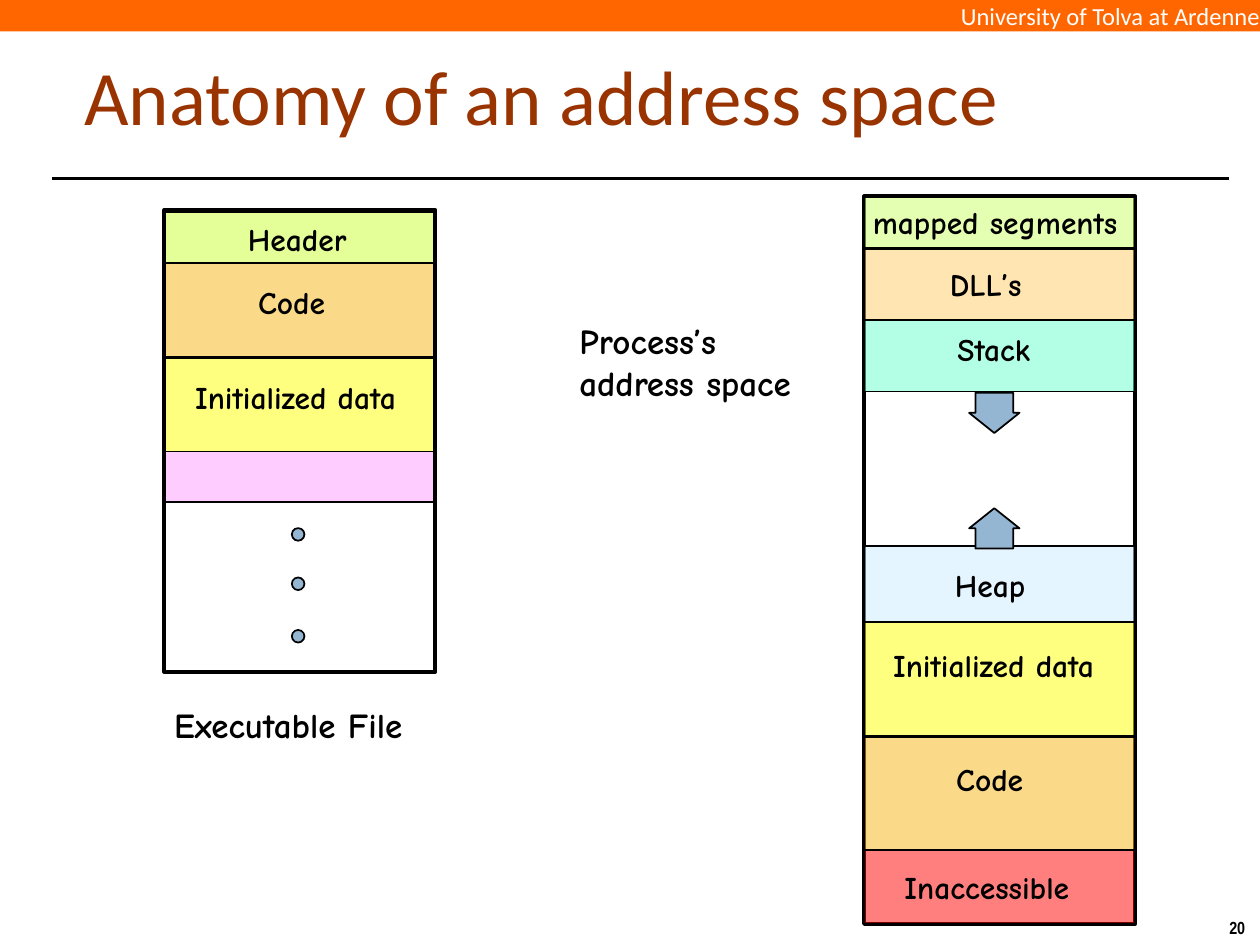
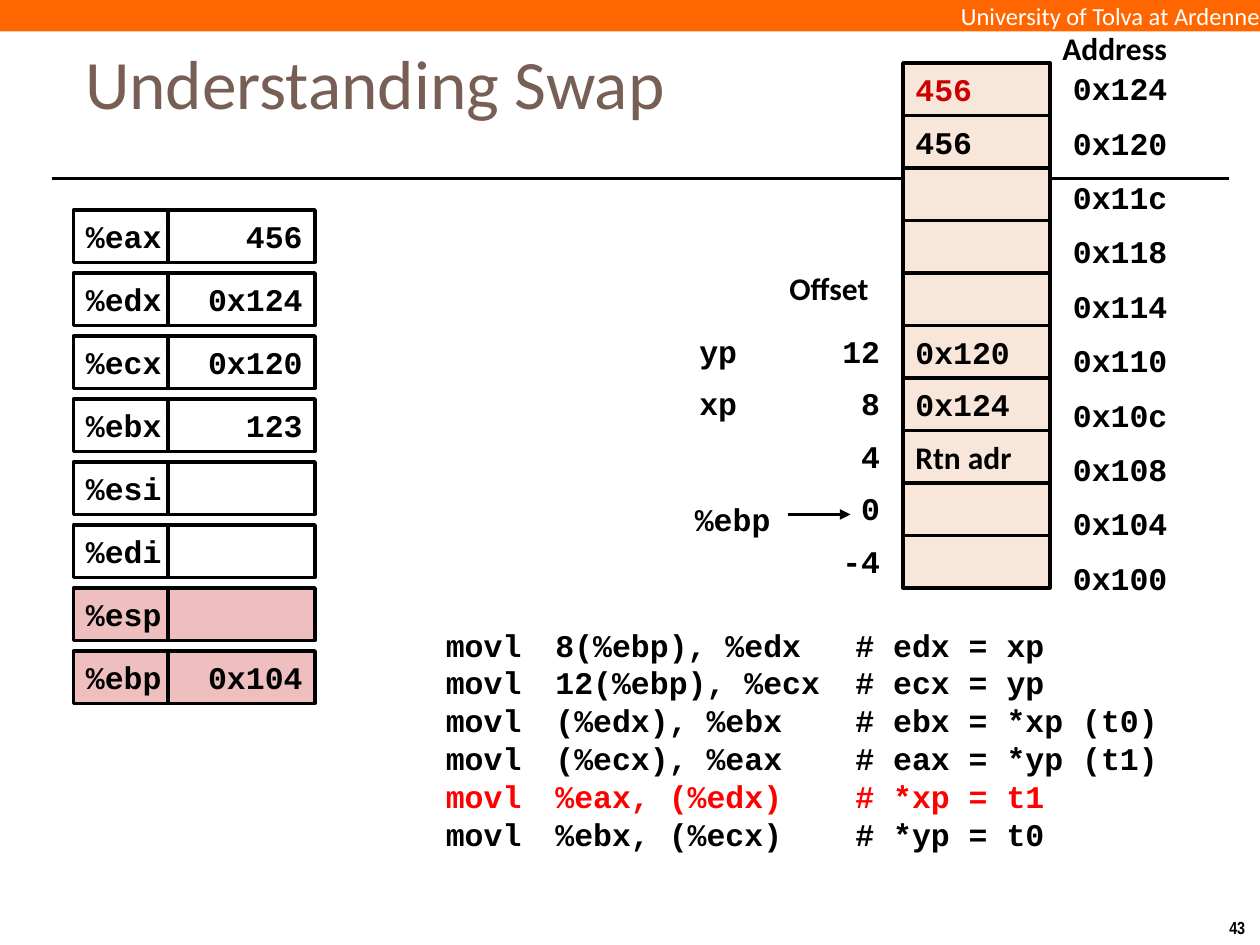
import pptx
import pptx.util
import pptx.dml.color
import pptx.enum.shapes
import pptx.enum.text
import pptx.oxml
import pptx.oxml.ns
from lxml import etree

SHAPES = pptx.enum.shapes.MSO_SHAPE
ALIGN = pptx.enum.text.PP_ALIGN
ANCHOR = pptx.enum.text.MSO_ANCHOR
AUTO_SIZE = pptx.enum.text.MSO_AUTO_SIZE
qn = pptx.oxml.ns.qn

COLUMNS, ROWS = 120, 90
WIDTH, HEIGHT = pptx.util.Inches(10), pptx.util.Inches(7.5)

COLORS = {
    "black": "000000",
    "white": "FFFFFF",
    "band": "FF6600",
    "anatomy title": "993300",
    "swap title": "775F55",
    "header": "CCFF33",
    "mapped": "CCFF66",
    "code": "F7B615",
    "data": "FFFF00",
    "section": "FFCCFF",
    "library": "FFCC66",
    "stack": "66FFCC",
    "heap": "CCECFF",
    "inaccessible": "FF0000",
    "marker": "94B6D2",
    "memory": "F8E6DA",
    "pointer register": "EFBFBF",
    "changed": "CC0000",
    "current": "FF0000",
}
SANS, COMIC, MONO, NARROW = "Calibri", "Comic Neue", "Courier New", "Arial Narrow"

FILE_LEFT, SPACE_LEFT, SEGMENT_WIDTH = 15.65, 82.3, 25.8
FILE_SEGMENTS = [
    ("Code", 25.1, 8.9, "code", (23.4, 26.4, 9.24)),
    ("Header", 20.2, 4.8, "header", (22.44, 20.4, 12.72)),
    ("Initialized data", 34.1, 8.9, "data", (17.4, 35.4, 24.12)),
]
SPACE_SEGMENTS = [
    ("Code", 70.2, 10.7, "code", (89.88, 71.76, 9.24)),
    ("Initialized data", 59.3, 10.8, "data", (83.88, 60.96, 24.12)),
    ("Heap", 52, 7.2, "heap", (89.76, 53.28, 9.48)),
    ("Stack", 30.5, 6.8, "stack", (90, 30.84, 10.68)),
    ("DLL’s", 23.7, 6.8, "library", (89.28, 24.6, 9.84)),
    ("mapped segments", 18.8, 4.8, "mapped", (81.96, 18.72, 26.88)),
    ("Inaccessible", 81, 7, "inaccessible", (84.96, 82.08, 20.28)),
]

CELL_WIDTH, CELL_HEIGHT = 14, 5
MEMORY_LEFT, MEMORY_TOP = 86, 6
MEMORY = ["456", "456", "", "", "", "0x120", "0x124", "Rtn adr", "", ""]
OFFSETS = ["12", "8", "4", "0", "-4"]
ARGUMENTS = ["yp", "xp"]
FIRST_OFFSET_ROW = 5
ADDRESSES = ["0x124", "0x120", "0x11c", "0x118", "0x114",
             "0x110", "0x10c", "0x108", "0x104", "0x100"]
ADDRESS_PITCH = 5.18
REGISTERS = {"%eax": "456", "%edx": "0x124", "%ecx": "0x120", "%ebx": "123",
             "%esi": "", "%edi": "", "%esp": "", "%ebp": "0x104"}
POINTER_REGISTERS = ("%esp", "%ebp")
REGISTER_PITCH = 6
INSTRUCTIONS = [
    ("8(%ebp), %edx", "# edx = xp"),
    ("12(%ebp), %ecx", "# ecx = yp"),
    ("(%edx), %ebx", "# ebx = *xp (t0)"),
    ("(%ecx), %eax", "# eax = *yp (t1)"),
    ("%eax, (%edx)", "# *xp = t1"),
    ("%ebx, (%ecx)", "# *yp = t0"),
]
CURRENT_INSTRUCTION = 4
CODE_TABS = (0.44, 1.31, 3.69)


def across(columns):
    return round(WIDTH * columns / COLUMNS)


def down(rows):
    return round(HEIGHT * rows / ROWS)


def place(left, top, width, height):
    return across(left), down(top), across(width), down(height)


def color(name):
    return pptx.dml.color.RGBColor.from_string(COLORS[name])


def style(paragraph, size, font, ink="black", bold=True, align=ALIGN.LEFT):
    paragraph.alignment = align
    paragraph.font.size = pptx.util.Pt(size)
    paragraph.font.name = font
    paragraph.font.bold = bold
    paragraph.font.color.rgb = color(ink)


def add_label(slide, text, box, size=18, font=COMIC, wrap=False, **look):
    label = slide.shapes.add_textbox(*place(*box))
    frame = label.text_frame
    frame.word_wrap = wrap
    frame.auto_size = AUTO_SIZE.SHAPE_TO_FIT_TEXT
    frame.text = text
    for paragraph in frame.paragraphs:
        style(paragraph, size, font, **look)
    return label


def add_block(slide, box, fill=None, line=1, alpha=None, kind=SHAPES.RECTANGLE):
    block = slide.shapes.add_shape(kind, *place(*box))
    block.shadow.inherit = False
    if fill:
        block.fill.solid()
        block.fill.fore_color.rgb = color(fill)
    else:
        block.fill.background()
    if alpha:
        tint = block.fill._xPr.find(qn("a:solidFill"))[0]
        etree.SubElement(tint, qn("a:alpha")).set("val", str(alpha * 1000))
    if line:
        block.line.color.rgb = color("black")
        block.line.width = pptx.util.Pt(line)
    else:
        block.line.fill.background()
    return block


def add_cell(slide, left, top, width, fill, text, **look):
    cell = add_block(slide, (left, top, width, CELL_HEIGHT), fill, line=2)
    if text:
        frame = cell.text_frame
        frame.word_wrap = False
        frame.vertical_anchor = ANCHOR.MIDDLE
        frame.text = text
        style(frame.paragraphs[0], 18, **look)


def add_line(slide, left, right, row, width, arrow=False):
    line = slide.shapes.add_connector(
        pptx.enum.shapes.MSO_CONNECTOR.STRAIGHT,
        across(left), down(row), across(right), down(row))
    line.line.color.rgb = color("black")
    line.line.width = pptx.util.Pt(width)
    properties = line._element.spPr
    if arrow:
        etree.SubElement(properties.find(qn("a:ln")), qn("a:tailEnd")).set("type", "triangle")
    etree.SubElement(properties, qn("a:effectLst"))


def add_slide(presentation, title, box, size, ink, number):
    slide = presentation.slides.add_slide(presentation.slide_layouts[5])
    heading = slide.shapes.title
    heading.left, heading.top, heading.width, heading.height = place(*box)
    frame = heading.text_frame
    frame.text = title
    frame.word_wrap = True
    frame.auto_size = AUTO_SIZE.NONE
    frame.vertical_anchor = ANCHOR.MIDDLE
    style(frame.paragraphs[0], size, SANS, ink, bold=False)

    band = add_block(slide, (0, 0, COLUMNS, 3), "band", line=None)
    frame = band.text_frame
    frame.margin_left = frame.margin_right = frame.margin_top = frame.margin_bottom = 0
    frame.word_wrap = False
    frame.text = "University of Tolva at Ardenne"
    style(frame.paragraphs[0], 14, SANS, "white", bold=False, align=ALIGN.RIGHT)

    add_line(slide, 5, 117, 17, 1.5)
    add_label(slide, number, (115.9, 86.7, 4.1, 3.2), 10, NARROW)
    return slide


def add_segments(slide, left, segments):
    for name, top, height, fill, (label_left, label_top, label_width) in segments:
        add_block(slide, (left, top, SEGMENT_WIDTH, height), fill, alpha=50)
        add_label(slide, name, (label_left, label_top, label_width, 5.4))


def build_anatomy(presentation):
    slide = add_slide(presentation, "Anatomy of an address space",
                      (6.84, 3.96, 96.1, 10.2), 44, "anatomy title", "20")

    add_segments(slide, FILE_LEFT, FILE_SEGMENTS)
    add_block(slide, (FILE_LEFT, 43, SEGMENT_WIDTH, 4.8), "section")
    add_block(slide, (FILE_LEFT, 20, SEGMENT_WIDTH, 44), line=2.25)
    for top in (50.3, 55, 60):
        add_block(slide, (27.8, top, 1.2, 1.2), "marker", kind=SHAPES.OVAL)
    add_label(slide, "Executable File", (15.4, 66.4, 26.4, 5.9), 20)

    add_block(slide, (SPACE_LEFT, 18.7, SEGMENT_WIDTH, 69.3), line=2.25)
    add_segments(slide, SPACE_LEFT, SPACE_SEGMENTS)
    for kind, top in ((SHAPES.DOWN_ARROW, 37.4), (SHAPES.UP_ARROW, 48.4)):
        arrow = add_block(slide, (92.3, top, 4.8, 3.84), "marker", kind=kind)
        arrow.adjustments[0] = 0.75
    add_label(slide, "Process’s\naddress space", (54, 29.8, 24.4, 10.6), 20)


def add_memory(slide):
    for row, value in enumerate(MEMORY):
        add_cell(slide, MEMORY_LEFT, MEMORY_TOP + row * CELL_HEIGHT, CELL_WIDTH, "memory", value,
                 font=SANS if value == "Rtn adr" else MONO,
                 ink="changed" if row == 0 else "black")
    add_label(slide, "Address", (100, 2.2, 12.5, 4.8), font=SANS)
    for row, address in enumerate(ADDRESSES):
        add_label(slide, address, (101, MEMORY_TOP + row * ADDRESS_PITCH, 16, 4.8),
                  font=MONO, wrap=True)


def add_frame_offsets(slide):
    top = MEMORY_TOP + FIRST_OFFSET_ROW * CELL_HEIGHT
    add_label(slide, "Offset", (74, 25, 10, 4.8), font=SANS)
    for row, offset in enumerate(OFFSETS):
        add_label(slide, offset, (79, top + row * CELL_HEIGHT, 6, 4.8),
                  font=MONO, align=ALIGN.RIGHT)
    for row, argument in enumerate(ARGUMENTS):
        label = add_label(slide, argument, (66, top + row * CELL_HEIGHT, 8.6, 4.8),
                          font=MONO, wrap=True)
        label.text_frame.margin_left = label.text_frame.margin_right = pptx.util.Inches(0.05)
    add_label(slide, "%ebp", (65, 47, 9.6, 4.8), font=MONO)
    add_line(slide, 75, 81, 49, 2, arrow=True)


def add_registers(slide):
    for row, (register, value) in enumerate(REGISTERS.items()):
        top = 20 + row * REGISTER_PITCH
        fill = "pointer register" if register in POINTER_REGISTERS else "white"
        add_cell(slide, 7, top, 9, fill, register, font=MONO)
        add_cell(slide, 16, top, CELL_WIDTH, fill, value, font=MONO, align=ALIGN.RIGHT)


def add_code(slide):
    text = "\n".join("\t".join(("", "movl", *parts)) for parts in INSTRUCTIONS)
    listing = add_label(slide, text, (36, 59, 78, 23), font=MONO, wrap=True)
    for row, paragraph in enumerate(listing.text_frame.paragraphs):
        if row == CURRENT_INSTRUCTION:
            paragraph.font.color.rgb = color("current")
        tabs = etree.Element(qn("a:tabLst"))
        for position in CODE_TABS:
            etree.SubElement(tabs, qn("a:tab"), pos=str(pptx.util.Inches(position)), algn="l")
        paragraph._p.get_or_add_pPr().find(qn("a:defRPr")).addprevious(tabs)


def build_swap(presentation):
    slide = add_slide(presentation, "Understanding Swap",
                      (6.9, 3.96, 83.6, 7.6), 39.6, "swap title", "43")
    add_memory(slide)
    add_frame_offsets(slide)
    add_registers(slide)
    add_code(slide)


def main():
    presentation = pptx.Presentation()
    presentation.slide_width, presentation.slide_height = WIDTH, HEIGHT
    build_anatomy(presentation)
    build_swap(presentation)
    presentation.save("out.pptx")


if __name__ == "__main__":
    main()
